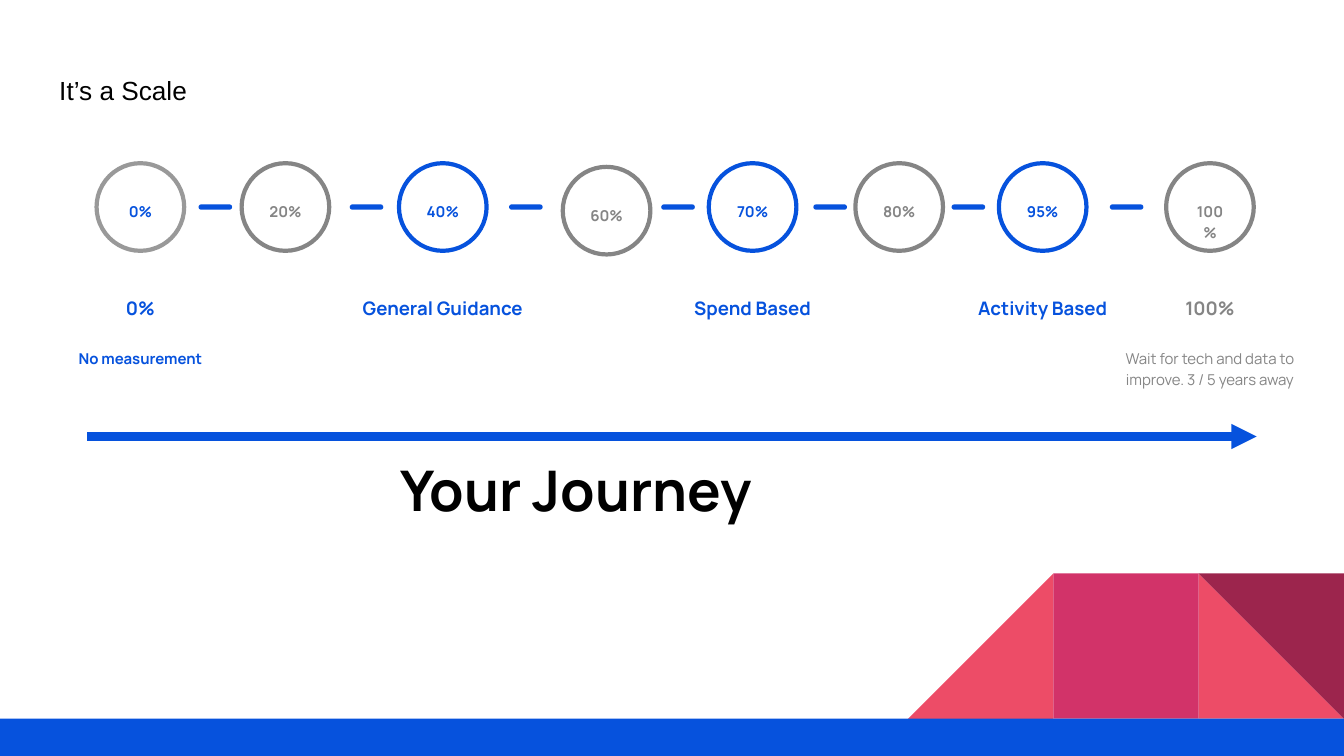
from lxml.etree import SubElement
from pptx import Presentation
from pptx.dml.color import RGBColor
from pptx.enum.shapes import MSO_CONNECTOR, MSO_SHAPE
from pptx.enum.text import MSO_ANCHOR, MSO_AUTO_SIZE, PP_ALIGN
from pptx.oxml.ns import qn
from pptx.util import Pt

WIDTH, HEIGHT = 960, 540
BLUE, GRAY, SILVER, BLACK = "0652DD", "858585", "999999", "000000"
CORAL, PINK, WINE = "ED4C67", "D23369", "9C254D"

RING_TOP, RING_SIZE = 116.6, 62.6
LABEL_WIDTH = 142
INSET = 9.6

# Ring left, ring drop, value, ring colour, value colour, stage name, note
STAGES = [
    (69, 0, "0%", SILVER, BLUE, "0%", "No measurement"),
    (172.6, 0, "20%", GRAY, GRAY, None, None),
    (285, 0, "40%", BLUE, BLUE, "General Guidance", None),
    (402, 2.6, "60%", GRAY, GRAY, None, None),
    (506.3, 0, "70%", BLUE, BLUE, "Spend Based", None),
    (611, 0, "80%", GRAY, GRAY, None, None),
    (713.5, 0, "95%", BLUE, BLUE, "Activity Based", None),
    (833, 0, "100%", GRAY, GRAY, "100%",
     "Wait for tech and data to improve. 3 / 5 years away"),
]
DASH_LEFTS = [141.8, 249.8, 363.6, 472.3, 581, 679.7, 792.7]


def color(value):
    return RGBColor.from_string(value)


def apply(target, values):
    for name, value in values.items():
        setattr(target, name, value)


def write(shape, text, size, text_color, font="Manrope", bold=True,
          anchor=MSO_ANCHOR.TOP, align=PP_ALIGN.CENTER, spacing=1.0, after=0):
    frame = shape.text_frame
    frame.text = text
    apply(frame, {
        "word_wrap": True, "auto_size": MSO_AUTO_SIZE.NONE,
        "vertical_anchor": anchor,
        "margin_left": Pt(INSET), "margin_right": Pt(INSET),
        "margin_top": Pt(INSET), "margin_bottom": Pt(INSET),
    })
    paragraph = frame.paragraphs[0]
    apply(paragraph, {"alignment": align, "line_spacing": spacing,
                      "space_before": Pt(0), "space_after": Pt(after)})
    run_font = paragraph.runs[0].font
    apply(run_font, {"name": font, "size": Pt(size), "bold": bold})
    run_font.color.rgb = color(text_color)


def add_text(slide, left, top, width, height, text, size, text_color, **options):
    box = slide.shapes.add_textbox(Pt(left), Pt(top), Pt(width), Pt(height))
    write(box, text, size, text_color, **options)


def add_block(slide, kind, left, top, width, height, fill, rotation=0):
    block = slide.shapes.add_shape(kind, Pt(left), Pt(top), Pt(width), Pt(height))
    block.shadow.inherit = False
    block.fill.solid()
    block.fill.fore_color.rgb = color(fill)
    block.line.fill.background()
    block.rotation = rotation
    return block


def add_ring(slide, left, top, line_color):
    ring = slide.shapes.add_shape(MSO_SHAPE.OVAL, Pt(left), Pt(top),
                                  Pt(RING_SIZE), Pt(RING_SIZE))
    ring.shadow.inherit = False
    ring.fill.background()
    ring.line.color.rgb = color(line_color)
    ring.line.width = Pt(3)


def add_arrow(slide, left, right, y):
    arrow = slide.shapes.add_connector(MSO_CONNECTOR.STRAIGHT,
                                       Pt(left), Pt(y), Pt(right), Pt(y))
    arrow.line.color.rgb = color(BLUE)
    arrow.line.width = Pt(6)
    properties = arrow._element.spPr
    SubElement(properties.find(qn("a:ln")), qn("a:tailEnd"), type="triangle")
    SubElement(properties, qn("a:effectLst"))


def add_decoration(slide):
    side, floor = 103.8, 513.4
    top = floor - side
    left, middle, right = (WIDTH - side * count for count in (3, 2, 1))
    triangle = MSO_SHAPE.RIGHT_TRIANGLE
    add_block(slide, triangle, right, top, side, side, CORAL)
    add_block(slide, triangle, left, top, side, side, CORAL, rotation=270)
    add_block(slide, MSO_SHAPE.RECTANGLE, middle, top, side, side, PINK)
    add_block(slide, triangle, right, top, side, side, WINE, rotation=180)
    add_block(slide, MSO_SHAPE.RECTANGLE, 0, floor, WIDTH, HEIGHT - floor, BLUE)


def add_title(slide, text):
    title = slide.shapes.title
    apply(title, {"left": Pt(32.7), "top": Pt(43.2),
                  "width": Pt(894.5), "height": Pt(64)})
    write(title, text, 18.7, BLACK, font="Arial", bold=False, align=PP_ALIGN.LEFT)


def add_stage(slide, left, drop, value, ring_color, text_color, name, note):
    center = left + RING_SIZE / 2
    label_left = center - LABEL_WIDTH / 2
    add_ring(slide, left, RING_TOP + drop, ring_color)
    add_text(slide, center - 23, 133.4 + drop, 46, 34, value, 10.7, text_color,
             spacing=1.15, after=21.3)
    if name:
        add_text(slide, label_left, 191, LABEL_WIDTH, 47, name, 13.3, text_color,
                 anchor=MSO_ANCHOR.BOTTOM, spacing=1.15)
    if note:
        add_text(slide, label_left, 238.3, LABEL_WIDTH, 78, note, 10.7, text_color,
                 bold=text_color == BLUE, spacing=1.15, after=21.3)


def main():
    presentation = Presentation()
    apply(presentation, {"slide_width": Pt(WIDTH), "slide_height": Pt(HEIGHT)})
    slide = presentation.slides.add_slide(presentation.slide_layouts[5])

    # Corner shapes and title
    add_decoration(slide)
    add_title(slide, "It’s a Scale")

    # Scale of stages with dashes between them
    for stage in STAGES:
        add_stage(slide, *stage)
    for left in DASH_LEFTS:
        dash = add_block(slide, MSO_SHAPE.ROUNDED_RECTANGLE,
                         left, 146, 24, 3.8, BLUE)
        dash.adjustments[0] = 0.5

    # Journey arrow and caption
    add_arrow(slide, 62.4, 897.6, 311.8)
    add_text(slide, 180.7, 316, 461.5, 67.7, "Your Journey", 40, BLACK)

    presentation.save("out.pptx")


if __name__ == "__main__":
    main()
